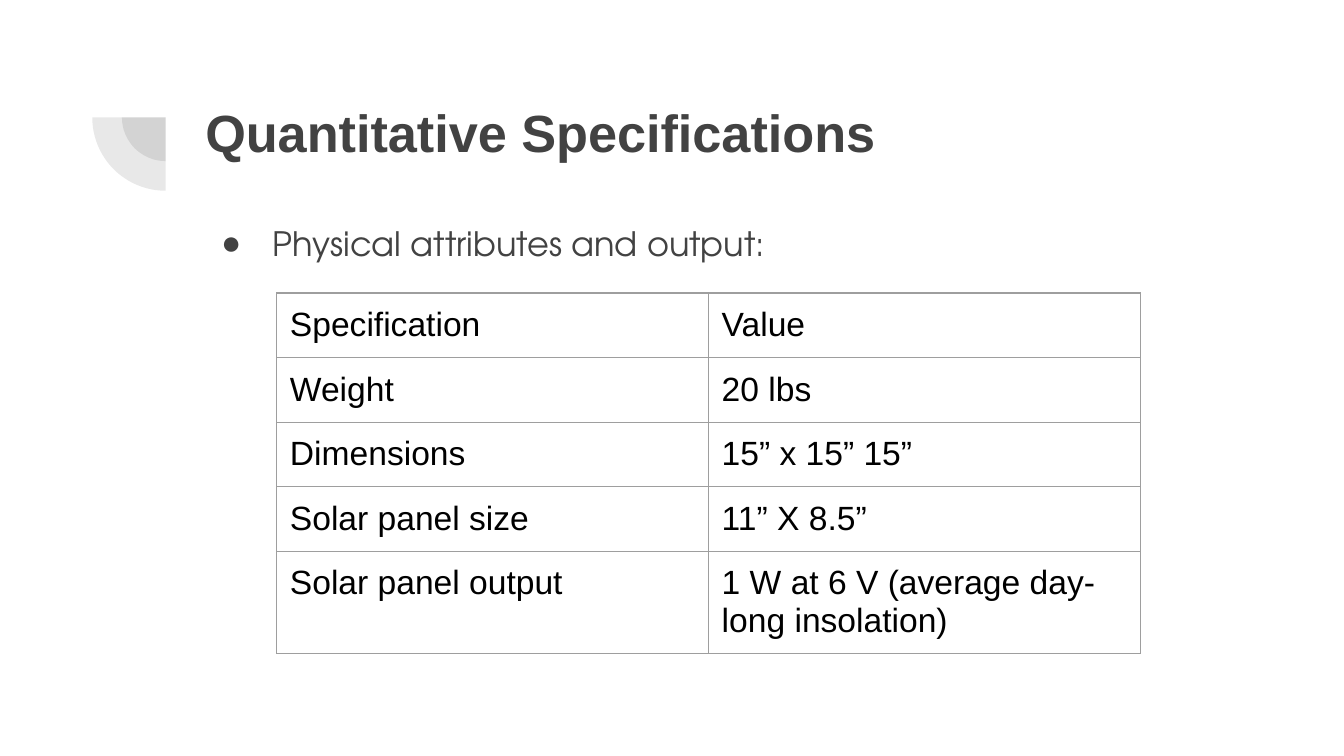
from typing import NamedTuple

from lxml.etree import SubElement
from pptx import Presentation
from pptx.dml.color import RGBColor
from pptx.enum.shapes import MSO_SHAPE as Preset
from pptx.enum.text import MSO_ANCHOR as Anchor, MSO_AUTO_SIZE as AutoSize, PP_ALIGN as Align
from pptx.oxml.ns import qn
from pptx.util import Cm, Pt

COLORS = {"gray": "424242", "border": "9E9E9E", "black": "000000"}
MARGIN = Cm(0.25)


class Box(NamedTuple):
    left: float
    top: float
    width: float
    height: float


class TextStyle(NamedTuple):
    font: str
    size: float
    color: str
    bold: bool = False


TITLE_STYLE = TextStyle("Arial", 28, "gray", True)
BODY_STYLE = TextStyle("TeX Gyre Adventor", 18, "gray")
CELL_STYLE = TextStyle("Arial", 18, "black")

# Concentric quarter circles share this centre
PIE_CENTER = (3.13, 2.22)
PIE_DIAMETERS = (1.65, 2.77)

ROWS = [
    ("Specification", "Value"),
    ("Weight", "20 lbs"),
    ("Dimensions", "15” x 15” 15”"),
    ("Solar panel size", "11” X 8.5”"),
    ("Solar panel output", "1 W at 6 V (average day-long insolation)"),
]
COLUMN_WIDTH = 8.16
ROW_HEIGHTS = [1.22] * 4 + [1.93]


def rgb(name: str) -> RGBColor:
    return RGBColor.from_string(COLORS[name])


def style_paragraph(paragraph, style: TextStyle) -> None:
    font = paragraph.font
    font.name, font.size, font.bold = style.font, Pt(style.size), style.bold
    font.color.rgb = rgb(style.color)


def fill_placeholder(shape, box: Box, text: str):
    shape.left, shape.top, shape.width, shape.height = map(Cm, box)
    frame = shape.text_frame
    frame.text = text
    frame.auto_size = AutoSize.NONE
    frame.word_wrap = True
    frame.vertical_anchor = Anchor.TOP
    frame.margin_left = frame.margin_right = MARGIN
    frame.margin_top = frame.margin_bottom = MARGIN
    paragraph = frame.paragraphs[0]
    paragraph.alignment = Align.LEFT
    paragraph.space_before = Pt(0)
    return paragraph


def add_bullet(paragraph, color: str) -> None:
    properties = paragraph._p.get_or_add_pPr()
    properties.set("marL", str(Cm(1.27)))
    properties.set("indent", str(Cm(-0.97)))
    bullet_color = SubElement(properties, qn("a:buClr"))
    SubElement(bullet_color, qn("a:srgbClr"), val=COLORS[color])
    SubElement(properties, qn("a:buFont"), typeface="Arial")
    SubElement(properties, qn("a:buChar"), char="●")


def add_quarter_circle(slide, diameter: float) -> None:
    left, top = (center - diameter / 2 for center in PIE_CENTER)
    shape = slide.shapes.add_shape(Preset.PIE, *map(Cm, (left, top, diameter, diameter)))
    shape.shadow.inherit = False
    shape.rotation = 270
    shape.adjustments[0], shape.adjustments[1] = 108, 162
    shape.fill.solid()
    shape.fill.fore_color.rgb = rgb("gray")
    color = next(shape._element.spPr.iter(qn("a:srgbClr")))
    SubElement(color, qn("a:alpha"), val="12000")
    shape.line.fill.background()


def add_borders(cell) -> None:
    properties = cell._tc.get_or_add_tcPr()
    for side in ("lnL", "lnR", "lnT", "lnB"):
        line = SubElement(properties, qn(f"a:{side}"), w=str(Pt(0.75)))
        fill = SubElement(line, qn("a:solidFill"))
        SubElement(fill, qn("a:srgbClr"), val=COLORS["border"])


def add_specification_table(slide, left: float, top: float) -> None:
    size = (COLUMN_WIDTH * 2, sum(ROW_HEIGHTS))
    table = slide.shapes.add_table(len(ROWS), 2, *map(Cm, (left, top, *size))).table
    table.first_row = table.horz_banding = False
    for column in table.columns:
        column.width = Cm(COLUMN_WIDTH)
    for row, height, texts in zip(table.rows, ROW_HEIGHTS, ROWS):
        row.height = Cm(height)
        for cell, text in zip(row.cells, texts):
            cell.text = text
            cell.margin_left = cell.margin_right = MARGIN
            cell.margin_top = cell.margin_bottom = MARGIN
            style_paragraph(cell.text_frame.paragraphs[0], CELL_STYLE)
            add_borders(cell)
            cell.fill.background()


def main() -> None:
    presentation = Presentation()
    presentation.slide_width, presentation.slide_height = Cm(25.4), Cm(14.29)
    slide = presentation.slides.add_slide(presentation.slide_layouts[1])

    # Title and bullet
    title = fill_placeholder(
        slide.shapes.title, Box(3.63, 1.65, 19.53, 2.77), "Quantitative Specifications")
    style_paragraph(title, TITLE_STYLE)
    bullet = fill_placeholder(
        slide.placeholders[1], Box(3.63, 3.84, 19.53, 7.06), "Physical attributes and output:")
    bullet.line_spacing = 1.15
    add_bullet(bullet, "gray")
    style_paragraph(bullet, BODY_STYLE)

    # Corner ornament
    for diameter in PIE_DIAMETERS:
        add_quarter_circle(slide, diameter)

    # Specifications
    add_specification_table(slide, 5.23, 5.54)
    presentation.save("out.pptx")


if __name__ == "__main__":
    main()
